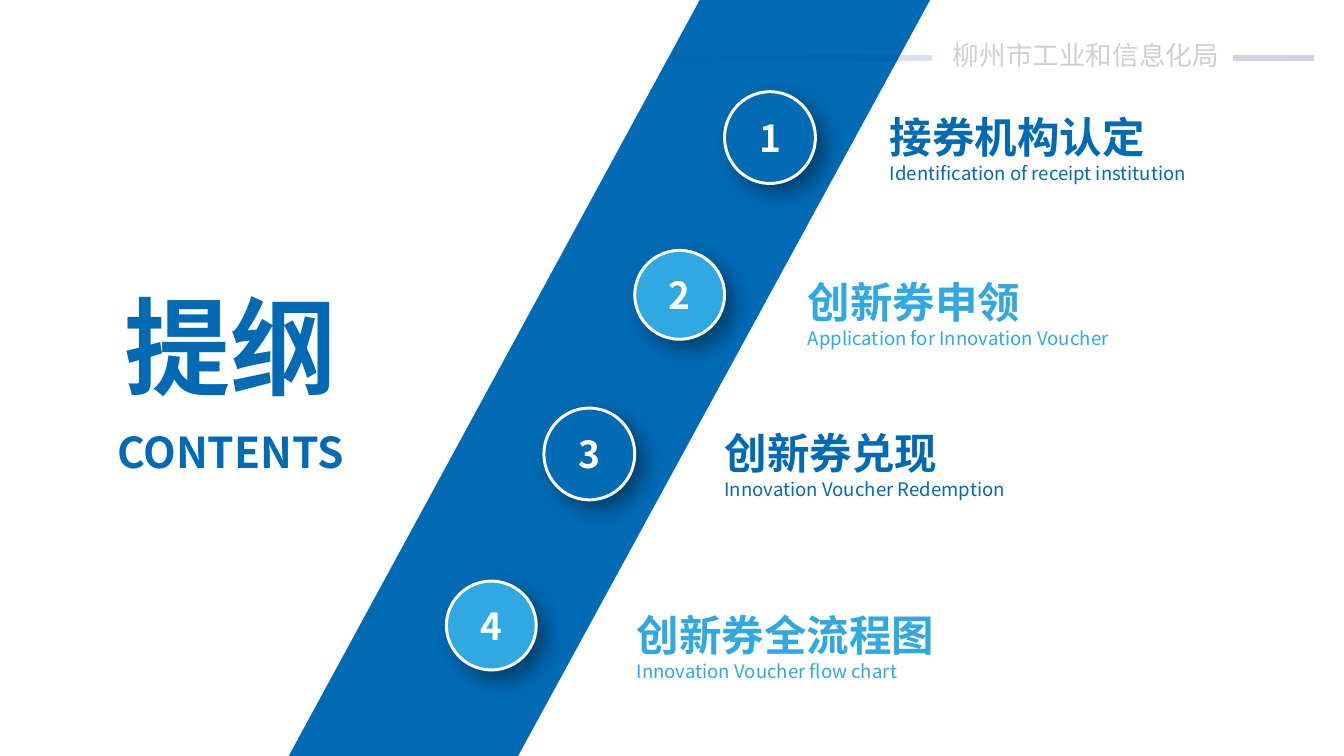
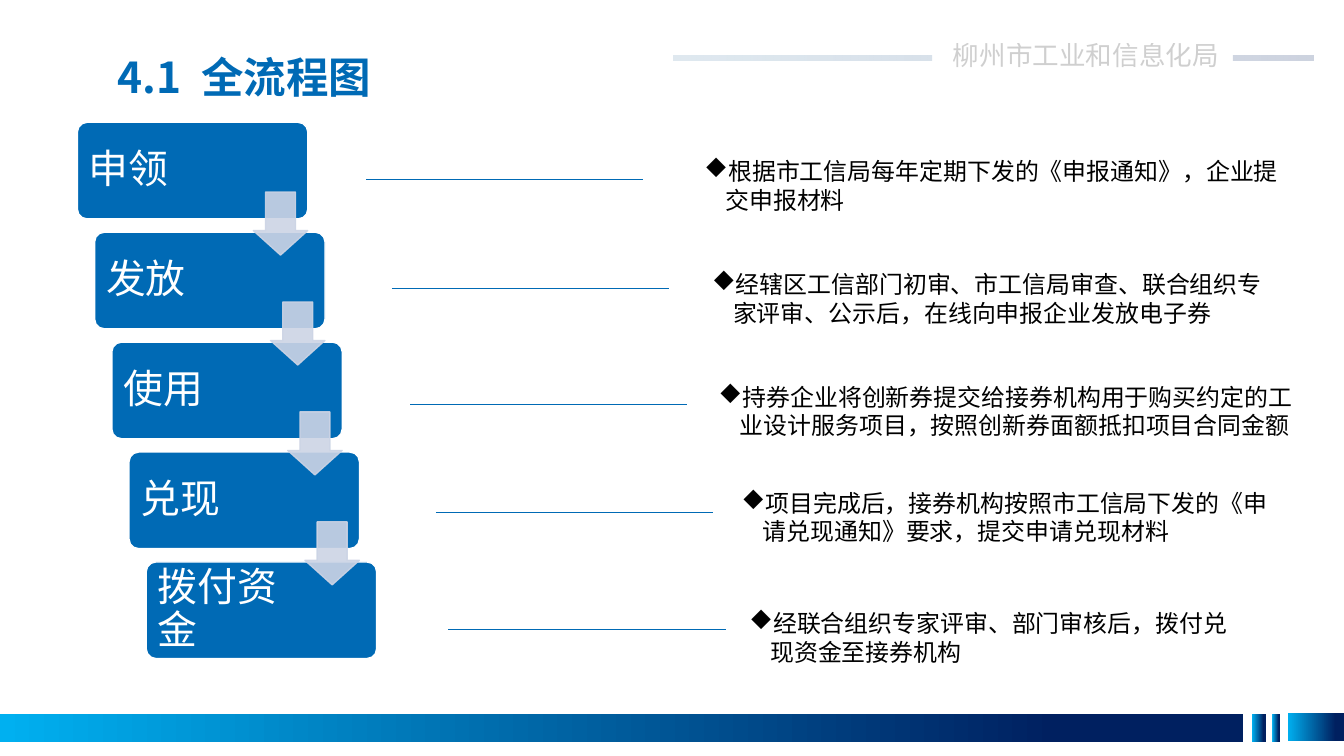
import pptx
import pptx.util
import pptx.dml.color
import pptx.oxml
import pptx.oxml.ns
import pptx.enum.shapes
import pptx.enum.text
import lxml.etree

PX = 9144  # one px is a hundredth of an inch
BLUE, SKY, WHITE, BLACK = "006AB5", "31A8E1", "FFFFFF", "000000"
NAVY, MIST = "002060", "CCD4E5"
SANS, JAPAN, BODY = "Noto Sans CJK SC", "Noto Sans CJK JP", "Calibri"
SHAPE = pptx.enum.shapes.MSO_SHAPE
ALIGN = pptx.enum.text.PP_ALIGN
ANCHOR = pptx.enum.text.MSO_ANCHOR
qn = pptx.oxml.ns.qn


def px(*nums):
    return [pptx.util.Emu(n * PX) for n in nums]


def rgb(code):
    return pptx.dml.color.RGBColor.from_string(code)


def sub(node, tag, **attrs):
    return lxml.etree.SubElement(node, qn(tag), {k: str(v) for k, v in attrs.items()})


def fade(node, alpha):
    """Set the opacity, in percent, of every colour below a node."""
    for clr in node.iter(qn("a:srgbClr")):
        sub(clr, "a:alpha", val=alpha * 1000)


def blend(shape, stops):
    """Fill from left to right; a stop is place, colour, opacity."""
    shape.fill.gradient()
    shape.fill.gradient_angle = 0
    for stop, (place, code, alpha) in zip(shape.fill.gradient_stops, stops):
        stop.position = place
        stop.color.rgb = rgb(code)
        if alpha < 100:
            fade(stop._gs, alpha)


def paint(shape, fill=None, line=None, width=1):
    shape.shadow.inherit = False
    if fill:
        shape.fill.solid()
        shape.fill.fore_color.rgb = rgb(fill)
    if line:
        shape.line.color.rgb = rgb(line)
        shape.line.width = pptx.util.Pt(width)
    else:
        shape.line.fill.background()


def add(slide, kind, box, fill=None, line=None, width=1):
    shape = slide.shapes.add_shape(kind, *px(*box))
    paint(shape, fill, line, width)
    return shape


def trace(slide, *loops):
    """Draw one outline made of closed loops of px points."""
    pen = slide.shapes.build_freeform(*loops[0][0], scale=PX)
    pen.add_line_segments(loops[0][1:], close=True)
    for loop in loops[1:]:
        pen.move_to(*loop[0])
        pen.add_line_segments(loop[1:], close=True)
    return pen.convert_to_shape()


def put(para, text, size, code, bold=False, face=SANS):
    run = para.add_run()
    run.text = text
    font = run.font
    font.size, font.bold, font.name = pptx.util.Pt(size), bold, face
    font.color.rgb = rgb(code)
    sub(run._r.get_or_add_rPr(), "a:ea", typeface=SANS if face == BODY else face)
    return run


def frame(shape, pads=(0, 0, 0, 0), anchor=ANCHOR.TOP, align=ALIGN.LEFT):
    """Set up the text frame and return its first paragraph."""
    area = shape.text_frame
    area.word_wrap = True
    area.margin_left, area.margin_top, area.margin_right, area.margin_bottom = px(*pads)
    area.vertical_anchor = anchor
    area.paragraphs[0].alignment = align
    return area.paragraphs[0]


def label(slide, box, *rest):
    shape = slide.shapes.add_textbox(*px(*box))
    para = frame(shape, *rest)
    shape.text_frame.auto_size = pptx.enum.text.MSO_AUTO_SIZE.SHAPE_TO_FIT_TEXT
    return shape, para


def header(slide):
    """Bureau name between two pale bars."""
    para = label(slide, (987, 36, 307, 44), (10, 5, 10, 5))[1]
    fade(put(para, "柳州市工业和信息化局", 20, BLACK, face=JAPAN)._r, 19)
    bars = [[(x, 58), (end, 58), (end, 63), (x, 63)]
            for x, end in ((1289, 1374), (705, 975))]
    shape = trace(slide, *bars)
    paint(shape)
    blend(shape, [(0, "005088", 13), (1, NAVY, 20)])


def footer(slide):
    for x, y, wide in ((0, 747, 1300), (1310, 747, 14), (1331, 747, 8), (1347, 746, 59)):
        bar = add(slide, SHAPE.RECTANGLE, (x, y, wide, 29))
        blend(bar, [(0, "00B0F0", 100), (0.85, NAVY, 100)])


def badge(slide, box, num, code):
    disc = add(slide, SHAPE.OVAL, box, code, WHITE, 2.25)
    glow = sub(disc._element.spPr.find(qn("a:effectLst")), "a:outerShdw",
               blurRad=16 * 12700, dist=9 * 12700, dir=45 * 60000,
               algn="tl", rotWithShape=0)
    sub(glow, "a:srgbClr", val=BLACK)
    fade(glow, 40)
    put(frame(disc, anchor=ANCHOR.MIDDLE, align=ALIGN.CENTER), str(num), 28, WHITE, True)


def topic(slide, box, title, gloss, code):
    shape, para = label(slide, box, (0, 0, 0, 0), ANCHOR.MIDDLE)
    put(para, title, 32, code, True)
    put(shape.text_frame.add_paragraph(), gloss, 14, code)


def card(slide, x, y, text):
    shape = add(slide, SHAPE.ROUNDED_RECTANGLE, (x, y, 241, 101), BLUE, WHITE)
    shape.adjustments[0] = 0.1
    para = frame(shape, (9, 9, 84, 9), ANCHOR.MIDDLE)
    para.line_spacing = 0.9
    put(para, text, 30, WHITE, face=BODY)


def arrow(slide, x, y):
    shape = add(slide, SHAPE.DOWN_ARROW, (x, y, 57, 66), MIST, MIST)
    shape.adjustments[0], shape.adjustments[1] = 0.55, 0.45
    fade(shape._element.spPr, 90)


def rule(slide, x, y, wide):
    line = slide.shapes.add_connector(
        pptx.enum.shapes.MSO_CONNECTOR.STRAIGHT, *px(x, y, x + wide, y))
    line.line.color.rgb = rgb(BLUE)
    line.line.width = pptx.util.Pt(0.5)
    sub(line._element.spPr, "a:effectLst")


def note(slide, box, text):
    para = label(slide, box, (10, 5, 10, 5))[1]
    props = para._p.get_or_add_pPr()
    props.set("marL", str(22 * PX))
    props.set("indent", str(-22 * PX))
    sub(props, "a:buFont", typeface="Wingdings")
    sub(props, "a:buChar", char="u")
    put(para, text, 18, BLACK, face=BODY)


def outline(slide):
    # Title and slanted band
    put(label(slide, (73, 293, 337, 135), (0, 0, 0, 0), ANCHOR.MIDDLE, ALIGN.CENTER)[1],
        "提纲", 80, BLUE, True)
    put(label(slide, (61, 446, 361, 54), (0, 0, 0, 0), ANCHOR.TOP, ALIGN.CENTER)[1],
        "CONTENTS", 32, BLUE, True)
    band = trace(slide, [(973, 0), (732, 0), (302, 791), (542, 791)])
    paint(band, BLUE)
    header(slide)

    # Numbered topics: disc place, text place, title, gloss
    topics = [
        ((758, 96), (931, 116), "接券机构认定", "Identification of receipt institution"),
        ((664, 262), (845, 289), "创新券申领", "Application for Innovation Voucher"),
        ((569, 427), (758, 447), "创新券兑现", "Innovation Voucher Redemption"),
        ((467, 608), (666, 637), "创新券全流程图", "Innovation Voucher flow chart"),
    ]
    for i, (disc, spot, title, gloss) in enumerate(topics):
        code, size = ((BLUE, (95, 96)), (SKY, (94, 93)))[i % 2]
        badge(slide, disc + size, i + 1, code)
        topic(slide, spot + (400, 77), title, gloss, code)


def flow(slide):
    footer(slide)
    header(slide)

    # Title, with a widened gap after the number
    para = label(slide, (113, 49, 370, 64), (10, 5, 10, 5))[1]
    put(para, "4.1", 32, BLUE, True)
    gap = put(para, " ", 32, BLUE, True)
    gap._r.get_or_add_rPr().set("spc", "750")
    put(para, "全流程图", 32, BLUE, True)

    # Steps: name, rule place, note box, note
    steps = [
        ("申领", (383, 188), (727, 159, 622),
         "根据市工信局每年定期下发的《申报通知》，企业提交申报材料"),
        ("发放", (410, 302), (735, 277, 598),
         "经辖区工信部门初审、市工信局审查、联合组织专家评审、公示后，在线向申报企业发放电子券"),
        ("使用", (429, 423), (742, 395, 638),
         "持券企业将创新券提交给接券机构用于购买约定的工业设计服务项目，按照创新券面额抵扣项目合同金额"),
        ("兑现", (456, 536), (766, 506, 575),
         "项目完成后，接券机构按照市工信局下发的《申请兑现通知》要求，提交申请兑现材料"),
        ("拨付资金", (469, 658), (774, 632, 543),
         "经联合组织专家评审、部门审核后，拨付兑现资金至接券机构"),
    ]
    spots = [(81 + 18 * i, 128 + 115 * i) for i in range(len(steps))]
    for (x, y), (name, start, box, text) in zip(spots, steps):
        card(slide, x, y, name)
        rule(slide, *start, 290)
        note(slide, box + (71,), text)
    for x, y in spots[:-1]:
        arrow(slide, x + 184, y + 73)


def main():
    deck = pptx.Presentation()
    deck.slide_width, deck.slide_height = px(1406, 791)
    for draw in (outline, flow):
        draw(deck.slides.add_slide(deck.slide_layouts[6]))
    deck.save("out.pptx")


if __name__ == "__main__":
    main()
